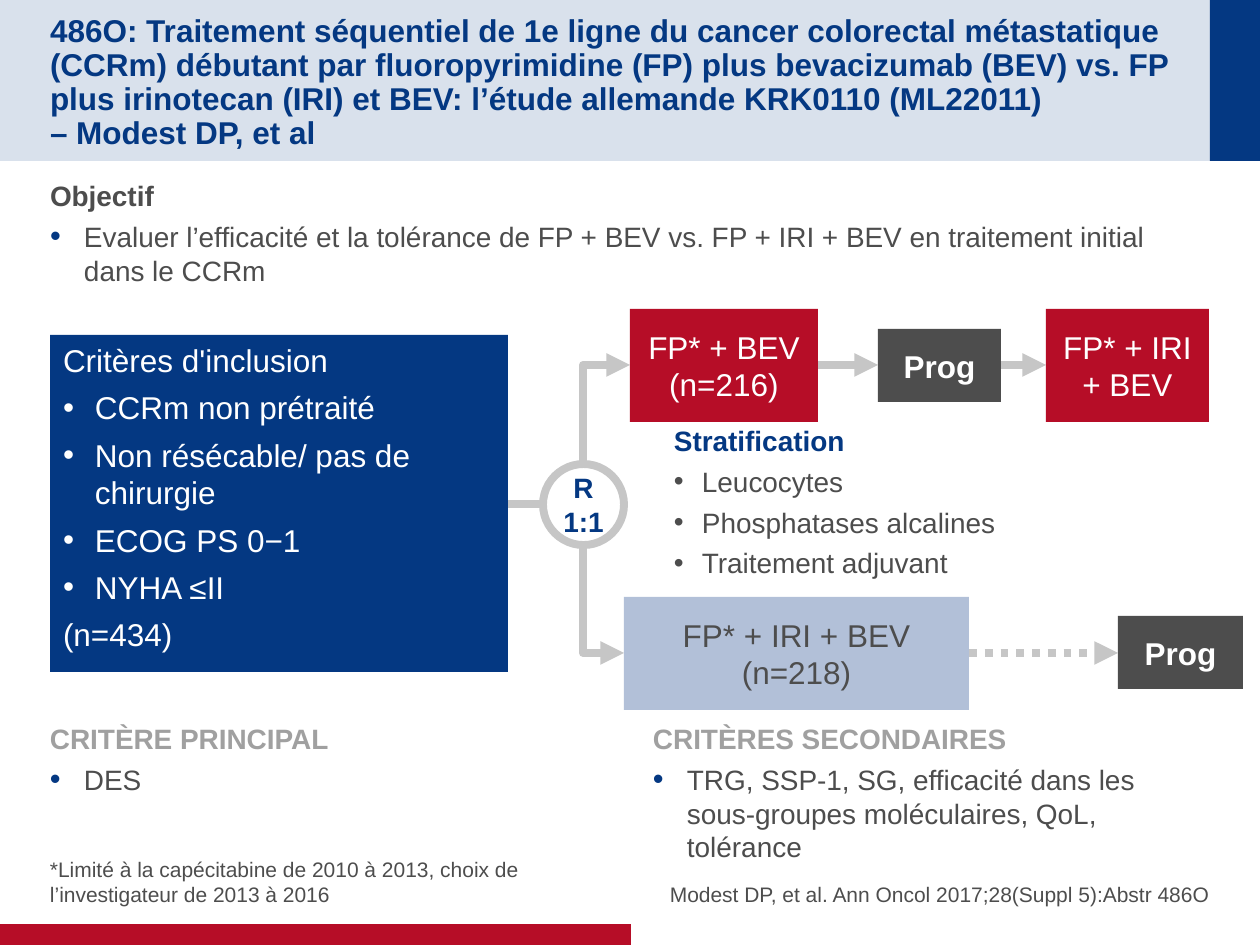
from dataclasses import dataclass
from typing import Optional

from lxml.etree import SubElement
from pptx import Presentation
from pptx.dml.color import RGBColor
from pptx.enum.dml import MSO_LINE
from pptx.enum.shapes import MSO_CONNECTOR, MSO_SHAPE
from pptx.enum.text import MSO_ANCHOR, MSO_AUTO_SIZE, PP_ALIGN
from pptx.oxml.ns import qn
from pptx.util import Pt

WIDTH, HEIGHT = 1260, 945
SCALE = 914400 / 126
COLORS = {
    "navy": "043882", "band": "D9E1EC", "red": "B60D27", "dark": "4D4D4D",
    "pale": "B2C0D8", "arrow": "C6C6C6", "heading": "A0A0A0", "white": "FFFFFF",
}


@dataclass(frozen=True)
class Box:
    left: int
    top: int
    width: int
    height: int

    def emu(self) -> list[int]:
        return [px(n) for n in (self.left, self.top, self.width, self.height)]


@dataclass(frozen=True)
class Line:
    text: str
    size: int = 16
    color: str = "dark"
    bold: bool = False
    align: PP_ALIGN = PP_ALIGN.LEFT
    after: float = 4
    spacing: float = 1.0
    indent: int = 0
    bullet: bool = False
    bullet_color: Optional[str] = None


@dataclass(frozen=True)
class Step:
    box: Box
    lines: tuple[str, ...]
    fill: str
    color: str = "white"
    bold: bool = False


@dataclass(frozen=True)
class Link:
    start: tuple[int, int]
    end: tuple[int, int]
    arrow: bool = True
    dotted: bool = False


def px(count: float) -> int:
    return round(count * SCALE)


def rgb(name: str) -> RGBColor:
    return RGBColor.from_string(COLORS[name])


def bullet_line(text: str) -> Line:
    return Line(text, indent=34, bullet=True, bullet_color="navy")


def format_bullet(para, line: Line) -> None:
    props = para._p.get_or_add_pPr()
    props.set("marL", str(px(line.indent)))
    props.set("indent", str(-px(line.indent)))
    if not line.bullet:
        SubElement(props, qn("a:buNone"))
        return
    if line.bullet_color:
        color = SubElement(props, qn("a:buClr"))
        SubElement(color, qn("a:srgbClr"), val=COLORS[line.bullet_color])
        SubElement(props, qn("a:buSzPct"), val="110000")
    SubElement(props, qn("a:buFont"), typeface="Arial")
    SubElement(props, qn("a:buChar"), char="•")


def write(frame, lines: list[Line], margins=(0, 6, 0, 6),
          anchor=MSO_ANCHOR.TOP, wrap: bool = True) -> None:
    """Fill a text frame; margins are left, top, right, bottom in px."""
    frame.auto_size = MSO_AUTO_SIZE.NONE
    frame.word_wrap = wrap
    frame.vertical_anchor = anchor
    (frame.margin_left, frame.margin_top,
     frame.margin_right, frame.margin_bottom) = map(px, margins)
    frame.text = "\n".join(line.text for line in lines)
    for para, line in zip(frame.paragraphs, lines):
        para.alignment = line.align
        para.line_spacing = line.spacing
        para.space_before = Pt(0)
        para.space_after = Pt(line.after)
        format_bullet(para, line)
        for span in para.runs:
            span.font.name = "Arial"
            span.font.size = Pt(line.size)
            span.font.bold = line.bold
            span.font.color.rgb = rgb(line.color)
        for line_break in para._p.findall(qn("a:br")):
            SubElement(line_break, qn("a:rPr"), sz=str(line.size * 100))


def add_text(page, box: Box, lines: list[Line], **layout) -> None:
    write(page.shapes.add_textbox(*box.emu()).text_frame, lines, **layout)


def fill_placeholder(holder, box: Box, lines: list[Line], **layout) -> None:
    holder.left, holder.top, holder.width, holder.height = box.emu()
    write(holder.text_frame, lines, **layout)


def add_block(page, box: Box, fill: str):
    shape = page.shapes.add_shape(MSO_SHAPE.RECTANGLE, *box.emu())
    shape.shadow.inherit = False
    shape.fill.solid()
    shape.fill.fore_color.rgb = rgb(fill)
    shape.line.fill.background()
    return shape


def add_step(page, step: Step) -> None:
    lines = [Line(text, 18, step.color, step.bold, PP_ALIGN.CENTER, after=0)
             for text in step.lines]
    write(add_block(page, step.box, step.fill).text_frame, lines,
          margins=(13, 0, 13, 0), anchor=MSO_ANCHOR.MIDDLE)


def style_connector(connector, arrow: bool, dotted: bool = False) -> None:
    connector.line.color.rgb = rgb("arrow")
    connector.line.width = Pt(4.5)
    if dotted:
        connector.line.dash_style = MSO_LINE.ROUND_DOT
    if arrow:
        SubElement(connector.line._get_or_add_ln(), qn("a:tailEnd"), type="triangle")
    SubElement(connector._element.spPr, qn("a:effectLst"))


def add_link(page, link: Link) -> None:
    ends = [px(n) for n in (*link.start, *link.end)]
    connector = page.shapes.add_connector(MSO_CONNECTOR.STRAIGHT, *ends)
    style_connector(connector, link.arrow, link.dotted)


def add_branch(page, link: Link) -> None:
    """Draw a one-bend arrow that goes vertically, then to the right."""
    (x1, y1), (x2, y2) = link.start, link.end
    length, depth = abs(y2 - y1), x2 - x1
    left, top = (x1 + x2 - length) / 2, (y1 + y2 - depth) / 2
    ends = [px(n) for n in (left, top, left + length, top + depth)]
    connector = page.shapes.add_connector(MSO_CONNECTOR.ELBOW, *ends)
    props = connector._element.spPr
    props.find(qn("a:prstGeom")).set("prst", "bentConnector2")
    frame = props.find(qn("a:xfrm"))
    upward = y2 < y1
    frame.set("rot", str((90 if upward else 270) * 60000))
    frame.set("flipH", "1")
    frame.set("flipV", "1" if upward else "0")
    style_connector(connector, link.arrow)


def add_randomisation(page, box: Box) -> None:
    circle = page.shapes.add_shape(MSO_SHAPE.OVAL, *box.emu())
    circle.shadow.inherit = False
    circle.fill.background()
    circle.line.color.rgb = rgb("arrow")
    circle.line.width = Pt(4.5)
    lines = [Line(text, 16, "navy", True, PP_ALIGN.CENTER, after=0) for text in ("R", "1:1")]
    write(circle.text_frame, lines, anchor=MSO_ANCHOR.MIDDLE, wrap=False)


def add_inclusion(page, box: Box) -> None:
    criteria = ["CCRm non prétraité", "Non résécable/ pas de chirurgie", "ECOG PS 0−1", "NYHA ≤II"]
    plain = {"size": 18, "color": "white", "after": 5.4}
    lines = [Line("Critères d'inclusion", **plain),
             *(Line(text, indent=32, bullet=True, **plain) for text in criteria),
             Line("(n=434)", **plain)]
    write(add_block(page, box, "navy").text_frame, lines, margins=(13, 6, 13, 6))


BANDS = [
    (Box(0, 0, WIDTH, 161), "band"),
    (Box(1210, 0, 50, 161), "navy"),
    (Box(0, 924, 631, 21), "red"),
]
UPPER, LOWER, HUB = 365, 653, 583
STEPS = [
    Step(Box(630, 309, 188, 113), ("FP* + BEV (n=216)",), "red"),
    Step(Box(878, 329, 123, 73), ("Prog",), "dark", bold=True),
    Step(Box(1046, 309, 163, 113), ("FP* + IRI + BEV",), "red"),
    Step(Box(624, 597, 345, 113), ("FP* + IRI + BEV", "(n=218)"), "pale", "dark"),
    Step(Box(1118, 616, 125, 73), ("Prog",), "dark", bold=True),
]
LINKS = [
    Link((508, 504), (543, 504), arrow=False),
    Link((818, UPPER), (878, UPPER)),
    Link((1001, UPPER), (1046, UPPER)),
    Link((969, LOWER), (1118, LOWER), dotted=True),
]
BRANCHES = [Link((HUB, 464), (630, UPPER)), Link((HUB, 544), (624, LOWER))]
TITLE = ("486O: Traitement séquentiel de 1e ligne du cancer colorectal métastatique (CCRm) "
         "débutant par fluoropyrimidine (FP) plus bevacizumab (BEV) vs. FP plus irinotecan (IRI) "
         "et BEV: l’étude allemande KRK0110 (ML22011) \v– Modest DP, et al")


def main() -> None:
    deck = Presentation()
    deck.slide_width, deck.slide_height = px(WIDTH), px(HEIGHT)
    page = deck.slides.add_slide(deck.slide_layouts[1])
    for index, (box, fill) in enumerate(BANDS):
        band = add_block(page, box, fill)
        page.shapes._spTree.insert(2 + index, band._element)

    fill_placeholder(page.shapes.title, Box(50, 25, 1135, 111),
                     [Line(TITLE, 18, "navy", True, after=0, spacing=0.9)],
                     margins=(0, 6, 0, 0), anchor=MSO_ANCHOR.MIDDLE)
    fill_placeholder(page.placeholders[1], Box(50, 173, 1159, 654), [
        Line("Objectif", bold=True),
        bullet_line("Evaluer l’efficacité et la tolérance de FP + BEV vs. FP + IRI + BEV "
                    "en traitement initial dans le CCRm")])

    add_randomisation(page, Box(543, 464, 81, 81))
    add_inclusion(page, Box(50, 335, 458, 337))
    for branch in BRANCHES:
        add_branch(page, branch)
    for link in LINKS:
        add_link(page, link)
    for step in STEPS:
        add_step(page, step)

    factors = ["Leucocytes", "Phosphatases alcalines", "Traitement adjuvant"]
    add_text(page, Box(661, 418, 388, 123),
             [Line("Stratification", color="navy", bold=True),
              *(Line(text, indent=28, bullet=True) for text in factors)], margins=(13, 6, 13, 6))
    add_text(page, Box(50, 716, 570, 123),
             [Line("CRITÈRE PRINCIPAL", color="heading", bold=True), bullet_line("DES")])
    add_text(page, Box(640, 716, 570, 147),
             [Line("CRITÈRES SECONDAIRES", color="heading", bold=True),
              bullet_line("TRG, SSP-1, SG, efficacité dans les sous-groupes moléculaires, "
                          "QoL, tolérance")], margins=(13, 6, 13, 6))
    notes = [
        (50, PP_ALIGN.LEFT, "*Limité à la capécitabine de 2010 à 2013, choix de "
                            "l’investigateur de 2013 à 2016"),
        (640, PP_ALIGN.RIGHT, "Modest DP, et al. Ann Oncol 2017;28(Suppl 5):Abstr 486O"),
    ]
    for left, align, text in notes:
        add_text(page, Box(left, 840, 570, 67), [Line(text, 12, align=align)],
                 margins=(0, 0, 0, 0), anchor=MSO_ANCHOR.BOTTOM)
    deck.save("out.pptx")


if __name__ == "__main__":
    main()
